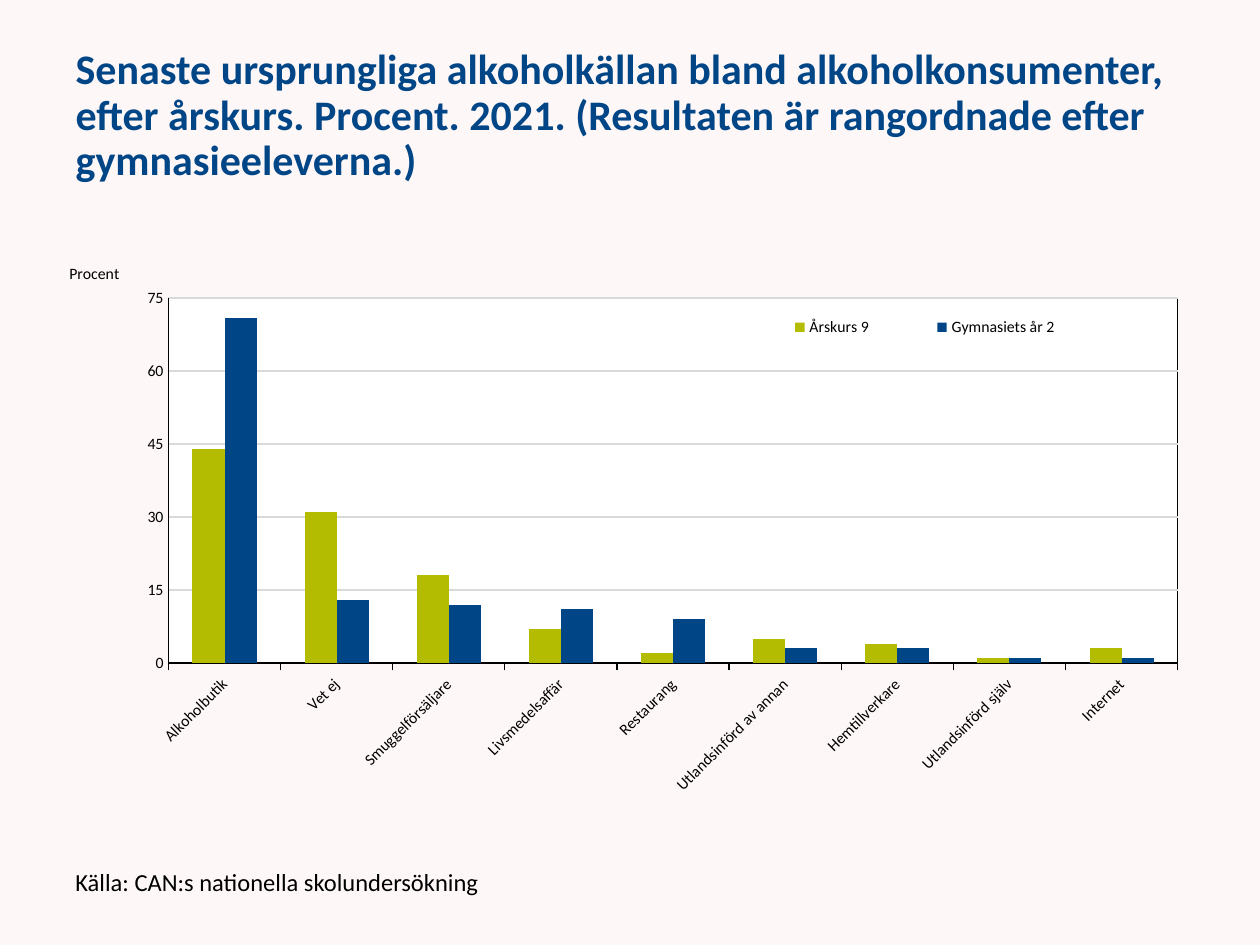
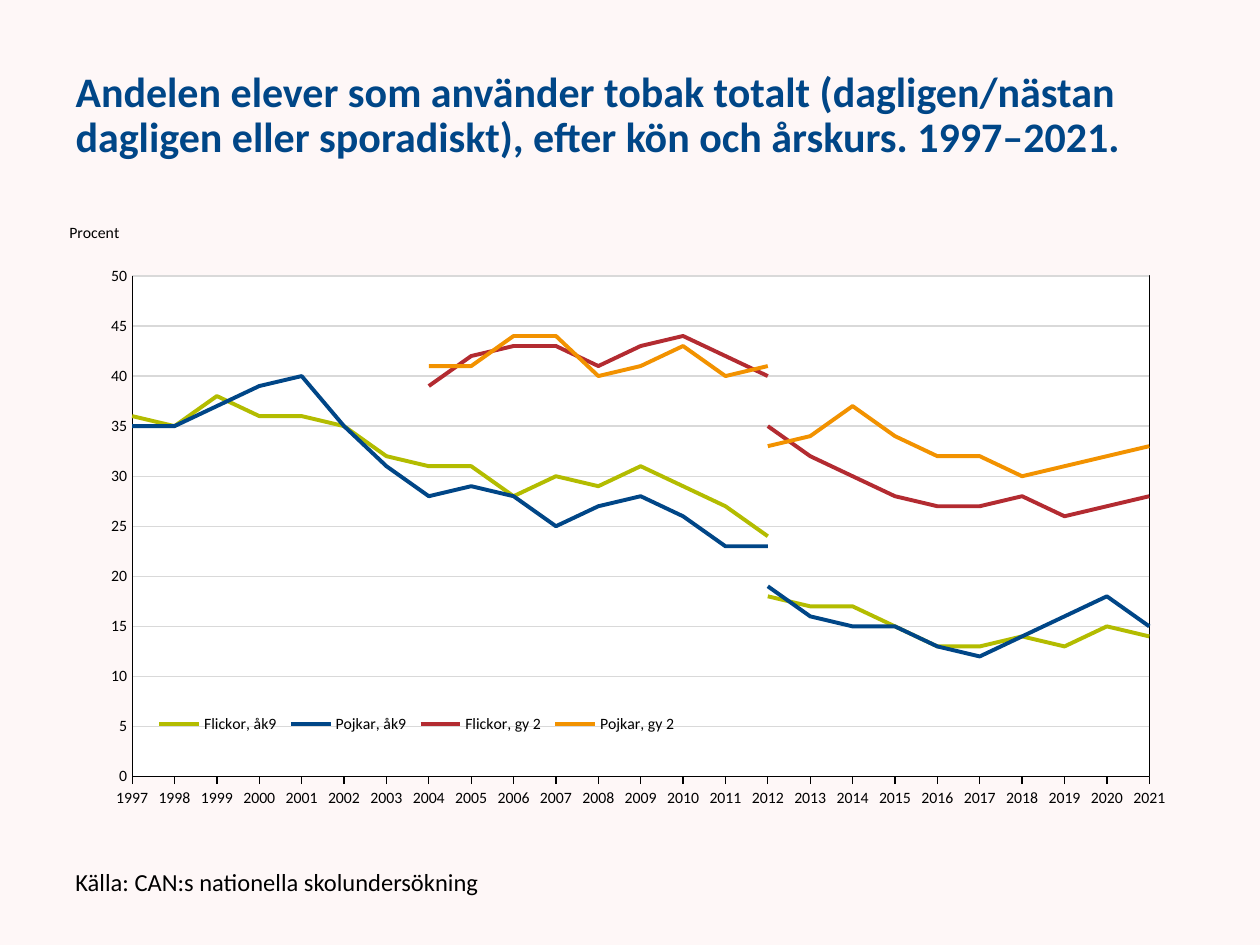
from lxml import etree
from pptx import Presentation
from pptx.chart.data import CategoryChartData
from pptx.dml.color import RGBColor
from pptx.enum.chart import XL_CHART_TYPE, XL_LEGEND_POSITION, XL_TICK_MARK
from pptx.enum.text import MSO_ANCHOR, PP_ALIGN
from pptx.oxml import parse_xml
from pptx.oxml.ns import nsdecls, qn
from pptx.util import Inches, Pt

FONT = "Calibri"
BACKGROUND = "FEF7F7"
BLACK = "000000"
GRID = "D9D9D9"
LIME, BLUE, RED, ORANGE = "B3BC00", "004687", "B32B31", "F29200"
SOURCE = "Källa: CAN:s nationella skolundersökning"


def color(hex_value):
    return RGBColor.from_string(hex_value)


def place(element, **fractions):
    """Give a chart part a manual layout in fractions of the chart size."""
    for old_layout in element.findall(qn("c:layout")):
        element.remove(old_layout)
    layout = parse_xml(f"<c:layout {nsdecls('c')}><c:manualLayout/></c:layout>")
    manual = layout[0]
    if element.tag == qn("c:plotArea"):
        etree.SubElement(manual, qn("c:layoutTarget")).set("val", "inner")
    for side in "xy":
        etree.SubElement(manual, qn(f"c:{side}Mode")).set("val", "edge")
    for name, value in fractions.items():
        etree.SubElement(manual, qn(f"c:{name}")).set("val", str(value))
    overlay = element.find(qn("c:overlay"))
    if overlay is None:
        element.insert(0, layout)
    else:
        overlay.addprevious(layout)


# Each tobacco line is broken in 2012, when both parts have a value.
years = range(1997, 2022)
tobacco_lines = [
    ("Flickor, åk9", LIME,
     [36, 35, 38, 36, 36, 35, 32, 31, 31, 28, 30, 29, 31, 29, 27, 24],
     [18, 17, 17, 15, 13, 13, 14, 13, 15, 14]),
    ("Pojkar, åk9", BLUE,
     [35, 35, 37, 39, 40, 35, 31, 28, 29, 28, 25, 27, 28, 26, 23, 23],
     [19, 16, 15, 15, 13, 12, 14, 16, 18, 15]),
    ("Flickor, gy 2", RED,
     [39, 42, 43, 43, 41, 43, 44, 42, 40],
     [35, 32, 30, 28, 27, 27, 28, 26, 27, 28]),
    ("Pojkar, gy 2", ORANGE,
     [41, 41, 44, 44, 40, 41, 43, 40, 41],
     [33, 34, 37, 34, 32, 32, 30, 31, 32, 33]),
]
tobacco_series = []
for name, line_color, before, after in tobacco_lines:
    before_gap = [None] * (2012 - 1997 + 1 - len(before))
    after_gap = [None] * (2012 - 1997)
    tobacco_series.append((name, line_color, before_gap + before + [None] * (2021 - 2012)))
    tobacco_series.append((f"Series {len(tobacco_series) + 1}", line_color, after_gap + after))

chart_slides = [
    {
        "title": "Senaste ursprungliga alkoholkällan bland alkoholkonsumenter, efter årskurs. "
                 "Procent. 2021. (Resultaten är rangordnade efter gymnasieeleverna.)",
        "type": XL_CHART_TYPE.COLUMN_CLUSTERED,
        "top": 2.02, "height": 4.62,
        "categories": ["Alkoholbutik", "Vet ej", "Smuggelförsäljare", "Livsmedelsaffär",
                       "Restaurang", "Utlandsinförd av annan", "Hemtillverkare",
                       "Utlandsinförd själv", "Internet"],
        "series": [("Årskurs 9", LIME, [44, 31, 18, 7, 2, 5, 4, 1, 3]),
                   ("Gymnasiets år 2", BLUE, [71, 13, 12, 11, 9, 3, 3, 1, 1])],
        "maximum": 75, "step": 15,
        "plot": {"x": 0.093, "y": 0.075, "w": 0.89, "h": 0.627},
        "legend": {"x": 0.59, "y": 0.095, "w": 0.34, "h": 0.06},
    },
    {
        "title": "Andelen elever som använder tobak totalt (dagligen/nästan dagligen eller "
                 "sporadiskt), efter kön och årskurs. 1997–2021.",
        "type": XL_CHART_TYPE.LINE,
        "top": 1.69, "height": 4.95,
        "categories": [str(year) for year in years],
        "series": tobacco_series,
        "maximum": 50, "step": 5,
        "plot": {"x": 0.061, "y": 0.101, "w": 0.897, "h": 0.803},
        "legend": {"x": 0.077, "y": 0.795, "w": 0.47, "h": 0.05},
    },
]

presentation = Presentation()
presentation.slide_width = Inches(10)
presentation.slide_height = Inches(7.5)
master_fill = presentation.slide_master.background.fill
master_fill.solid()
master_fill.fore_color.rgb = color(BACKGROUND)

for content in chart_slides:
    slide = presentation.slides.add_slide(presentation.slide_layouts[5])

    title = slide.shapes.title
    title.left, title.top = Inches(0.5), Inches(0.3)
    title.width, title.height = Inches(9), Inches(1.25)
    source_box = slide.shapes.add_textbox(Inches(0.5), Inches(6.83), Inches(4.5), Inches(0.37))
    for shape, text, size, text_color, bold in [
        (title, content["title"], 24, BLUE, True),
        (source_box, SOURCE, 14, BLACK, False),
    ]:
        frame = shape.text_frame
        frame.text = text
        frame.word_wrap = True
        frame.vertical_anchor = MSO_ANCHOR.MIDDLE
        paragraph = frame.paragraphs[0]
        paragraph.alignment = PP_ALIGN.LEFT
        paragraph.line_spacing = 0.9
        paragraph.font.name = FONT
        paragraph.font.size = Pt(size)
        paragraph.font.bold = bold
        paragraph.font.color.rgb = color(text_color)

    chart_data = CategoryChartData(number_format="0")
    chart_data.categories = content["categories"]
    for name, _, values in content["series"]:
        chart_data.add_series(name, values)
    chart = slide.shapes.add_chart(
        content["type"], Inches(0.5), Inches(content["top"]),
        Inches(9), Inches(content["height"]), chart_data).chart
    chart.has_title = False
    chart.font.name = FONT
    chart.font.size = Pt(10)
    chart.font.color.rgb = color(BLACK)

    category_axis, value_axis = chart.category_axis, chart.value_axis
    category_axis.major_tick_mark = XL_TICK_MARK.OUTSIDE
    value_axis.major_tick_mark = XL_TICK_MARK.NONE
    value_axis.minimum_scale = 0
    value_axis.maximum_scale = content["maximum"]
    value_axis.major_unit = content["step"]
    value_axis.tick_labels.number_format = "0"
    value_axis.tick_labels.number_format_is_linked = False
    value_axis.has_major_gridlines = True
    gridline = value_axis.major_gridlines.format.line
    gridline.color.rgb = color(GRID)
    gridline.width = Pt(0.75)
    for axis in (category_axis, value_axis):
        axis.format.line.color.rgb = color(BLACK)
        axis.format.line.width = Pt(0.75)

    value_axis.has_title = True
    axis_title = value_axis.axis_title
    axis_title.text_frame.text = "Procent"
    axis_title.text_frame.paragraphs[0].font.bold = False
    title_element = value_axis._element.find(qn("c:title"))
    title_body = title_element.find(f".//{qn('a:bodyPr')}")
    title_body.set("rot", "0")
    title_body.set("vert", "horz")
    place(title_element, x=0.003, y=0.01)

    chart.has_legend = True
    legend = chart.legend
    legend.position = XL_LEGEND_POSITION.BOTTOM
    legend.include_in_layout = False
    place(legend._element, **content["legend"])

    for font in (category_axis.tick_labels.font, value_axis.tick_labels.font,
                 axis_title.text_frame.paragraphs[0].font, legend.font):
        font.name = FONT
        font.size = Pt(9)
        font.color.rgb = color(BLACK)

    plot_area = chart._chartSpace.find(f".//{qn('c:plotArea')}")
    place(plot_area, **content["plot"])
    plot_area.append(parse_xml(
        f'<c:spPr {nsdecls("c", "a")}>'
        '<a:solidFill><a:srgbClr val="FFFFFF"/></a:solidFill>'
        f'<a:ln w="9525"><a:solidFill><a:srgbClr val="{BLACK}"/></a:solidFill></a:ln>'
        "</c:spPr>"))

    plot = chart.plots[0]
    plot.vary_by_categories = False
    is_column = content["type"] == XL_CHART_TYPE.COLUMN_CLUSTERED
    for series, (_, series_color, _) in zip(plot.series, content["series"]):
        if is_column:
            series.format.fill.solid()
            series.format.fill.fore_color.rgb = color(series_color)
        else:
            series.smooth = False
            series.format.line.color.rgb = color(series_color)
            series.format.line.width = Pt(2.25)

    if is_column:
        plot.gap_width = 150
        plot.overlap = 0
        label_body = category_axis._element.find(f"{qn('c:txPr')}/{qn('a:bodyPr')}")
        label_body.set("rot", "-2700000")
        label_body.set("vert", "horz")
    else:
        # Start the lines on the value axis and name each line once in the legend.
        axis_element = value_axis._element
        for old_crossing in axis_element.findall(qn("c:crossBetween")):
            axis_element.remove(old_crossing)
        axis_element.find(qn("c:crosses")).addnext(
            parse_xml(f'<c:crossBetween {nsdecls("c")} val="midCat"/>'))
        legend_layout = legend._element.find(qn("c:layout"))
        for index in range(1, len(content["series"]), 2):
            legend_layout.addprevious(parse_xml(
                f'<c:legendEntry {nsdecls("c")}><c:idx val="{index}"/>'
                '<c:delete val="1"/></c:legendEntry>'))

presentation.save("out.pptx")
